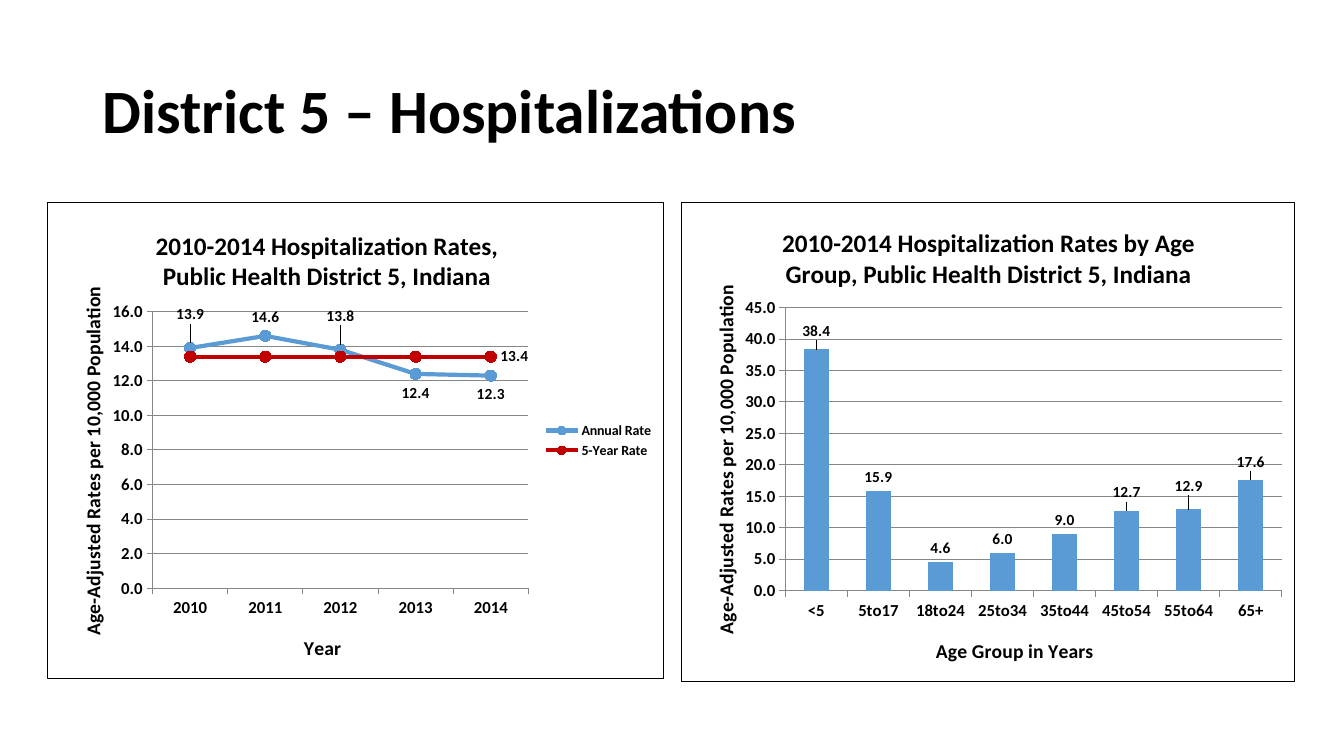
from lxml import etree
from pptx import Presentation
from pptx.chart.data import CategoryChartData
from pptx.dml.color import RGBColor
from pptx.enum import chart as charts, text
from pptx.oxml import parse_xml
from pptx.oxml.ns import nsdecls, qn
from pptx.util import Inches, Pt

BLACK = RGBColor(0x00, 0x00, 0x00)
GRAY = RGBColor(0x86, 0x86, 0x86)
BLUE = RGBColor(0x5B, 0x9B, 0xD5)
RED = RGBColor(0xC0, 0x00, 0x00)
FONT = "Calibri"
RATE_TITLE = "Age-Adjusted Rates per 10,000 Population"
LABEL = charts.XL_LABEL_POSITION


def style_font(font, size):
    font.name, font.size, font.bold = FONT, Pt(size), True
    font.color.rgb = BLACK


def set_layout(element, position, index=0, inner=False):
    """Give a chart part a manual layout of x, y and optionally w, h fractions."""
    for old in element.findall(qn("c:layout")):
        index = element.index(old)
        element.remove(old)
    layout = parse_xml(f"<c:layout {nsdecls('c')}><c:manualLayout/></c:layout>")
    manual = layout[0]
    values = list(zip("xywh", position))
    settings = [("layoutTarget", "inner")] if inner else []
    if index != 1 or element.tag != qn("c:dLbl"):
        settings += [("xMode", "edge"), ("yMode", "edge")]
    for name, value in settings + values:
        etree.SubElement(manual, qn(f"c:{name}")).set("val", str(value))
    element.insert(index, layout)


def write_title(title, wording, size, position):
    title.text_frame.text = wording
    for paragraph in title.text_frame.paragraphs:
        for run in paragraph.runs:
            style_font(run.font, size)
    set_layout(title._element, position, 1)


def style_axis(axis, wording, position):
    axis.major_tick_mark = charts.XL_TICK_MARK.OUTSIDE
    axis.minor_tick_mark = charts.XL_TICK_MARK.NONE
    style_font(axis.tick_labels.font, 12)
    axis.format.line.color.rgb = GRAY
    write_title(axis.axis_title, wording, 14, position)


def add_rate_chart(slide, box, kind, data, title, category_title, scale, places):
    """Add a bordered chart; places holds the layout of each of its parts."""
    frame = slide.shapes.add_chart(kind, *map(Inches, box), data)
    chart = frame.chart
    chart.font.name, chart.font.size = FONT, Pt(10)
    chart.font.color.rgb = BLACK
    chart.has_legend = False
    write_title(chart.chart_title, title, 18, places["title"])
    style_axis(chart.category_axis, category_title, places["category"])

    rates = chart.value_axis
    style_axis(rates, RATE_TITLE, places["rate"])
    body = rates.axis_title._element.find(".//" + qn("a:bodyPr"))
    body.set("rot", "-5400000")
    body.set("vert", "horz")
    rates.minimum_scale = 0
    rates.maximum_scale, rates.major_unit = scale
    rates.tick_labels.number_format = "0.0"
    rates.tick_labels.number_format_is_linked = False
    rates.has_major_gridlines = True
    rates.major_gridlines.format.line.color.rgb = GRAY

    chart.plots[0].vary_by_categories = False
    chart_element = chart._chartSpace.find(qn("c:chart"))
    set_layout(chart_element.find(qn("c:plotArea")), places["plot"], inner=True)
    chart_element.addnext(parse_xml(
        f'<c:spPr {nsdecls("c", "a")}><a:noFill/><a:ln w="9525"><a:solidFill>'
        f'<a:srgbClr val="{BLACK}"/></a:solidFill></a:ln></c:spPr>'))
    return chart


def label_series(series, position):
    labels = series.data_labels
    labels.show_value = True
    labels.position = position
    labels.number_format, labels.number_format_is_linked = "0.0", False
    style_font(labels.font, 11)


def label_point(series, index, position, lift=0):
    """Label one point, raised by lift as a fraction of the chart's height."""
    label = series.points[index].data_label
    style_font(label.font, 11)
    label.position = position
    if lift:
        element = series._element.xpath(f'.//c:dLbl[c:idx/@val="{index}"]')[0]
        set_layout(element, (0, -lift), 1)


def add_annual_chart(slide, box):
    data = CategoryChartData(number_format="0.0")
    data.categories = ["2010", "2011", "2012", "2013", "2014"]
    data.add_series("Annual Rate", [13.9, 14.6, 13.8, 12.4, 12.3])
    data.add_series("5-Year Rate", [13.4] * 5)
    chart = add_rate_chart(
        slide, box, charts.XL_CHART_TYPE.LINE_MARKERS, data,
        "2010-2014 Hospitalization Rates,\nPublic Health District 5, Indiana",
        "Year", (16, 2),
        {"title": (0.17, 0.05), "category": (0.41, 0.9), "rate": (0.045, 0.17),
         "plot": (0.17, 0.23, 0.61, 0.58)})
    chart.has_legend = True
    chart.legend.position = charts.XL_LEGEND_POSITION.RIGHT
    chart.legend.include_in_layout = False
    style_font(chart.legend.font, 10)

    annual, five_year = chart.plots[0].series
    for series, color in ((annual, BLUE), (five_year, RED)):
        series.smooth = False
        series.format.line.color.rgb, series.format.line.width = color, Pt(3)
        marker = series.marker
        marker.style, marker.size = charts.XL_MARKER_STYLE.CIRCLE, 8
        marker.format.fill.solid()
        marker.format.fill.fore_color.rgb = color
        marker.format.line.color.rgb = color
    label_series(annual, LABEL.ABOVE)
    for index in (0, 2):
        label_point(annual, index, LABEL.ABOVE, 0.03)
    for index in (3, 4):
        label_point(annual, index, LABEL.BELOW)
    label_point(five_year, 4, LABEL.RIGHT)


def add_age_chart(slide, box):
    data = CategoryChartData(number_format="0.0")
    data.categories = ["<5", "5to17", "18to24", "25to34",
                       "35to44", "45to54", "55to64", "65+"]
    data.add_series("Series 1", [38.4, 15.9, 4.6, 6, 9, 12.7, 12.9, 17.6])
    chart = add_rate_chart(
        slide, box, charts.XL_CHART_TYPE.COLUMN_CLUSTERED, data,
        "2010-2014 Hospitalization Rates by Age\n"
        "Group, Public Health District 5, Indiana",
        "Age Group in Years", (45, 5),
        {"title": (0.16, 0.045), "category": (0.41, 0.9), "rate": (0.045, 0.165),
         "plot": (0.17, 0.22, 0.81, 0.59)})
    plot = chart.plots[0]
    plot.gap_width = 150
    ages = plot.series[0]
    ages.format.fill.solid()
    ages.format.fill.fore_color.rgb = BLUE
    label_series(ages, LABEL.OUTSIDE_END)
    for index, lift in ((0, 0.01), (5, 0.01), (6, 0.02), (7, 0.01)):
        label_point(ages, index, LABEL.OUTSIDE_END, lift)


def add_heading(slide, box):
    frame = slide.shapes.add_textbox(*map(Inches, box)).text_frame
    frame.word_wrap = True
    frame.vertical_anchor = text.MSO_ANCHOR.MIDDLE
    frame.text = "District 5 – Hospitalizations"
    paragraph = frame.paragraphs[0]
    paragraph.line_spacing = 0.9
    style_font(paragraph.runs[0].font, 44)


def main():
    presentation = Presentation()
    presentation.slide_width = Inches(13.33)
    presentation.slide_height = Inches(7.5)
    slide = presentation.slides.add_slide(presentation.slide_layouts[6])
    add_heading(slide, (0.92, 0.4, 11.5, 1.45))
    add_annual_chart(slide, (0.47, 2, 6.12, 4.74))
    add_age_chart(slide, (6.75, 2, 6.09, 4.77))
    presentation.save("out.pptx")


if __name__ == "__main__":
    main()
